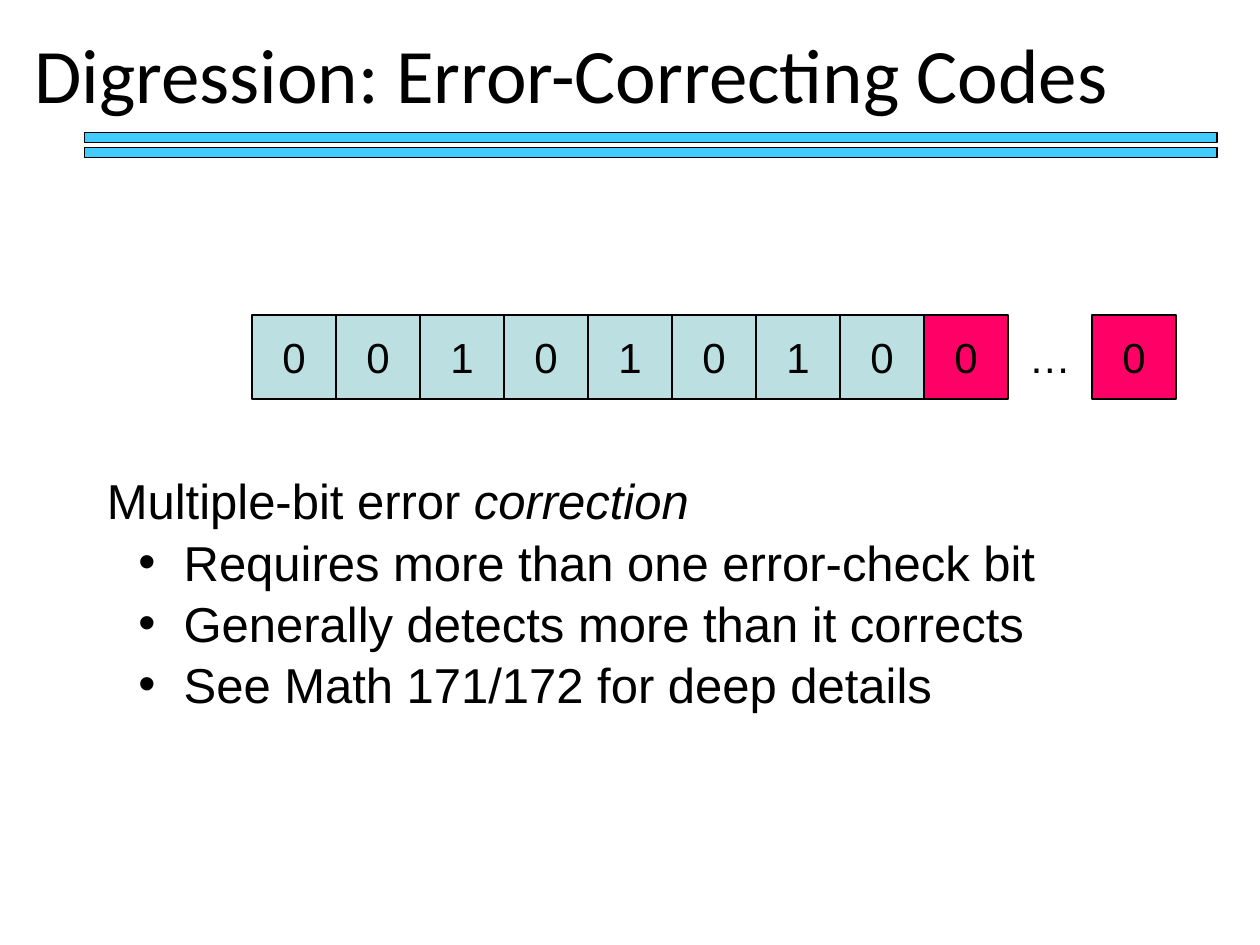
from lxml import etree
from pptx import Presentation
from pptx.dml.color import RGBColor
from pptx.enum.shapes import MSO_SHAPE
from pptx.enum.text import MSO_ANCHOR, PP_ALIGN
from pptx.oxml.ns import qn
from pptx.util import Inches, Pt

COLORS = {
    "text": "000000",
    "outline": "000000",
    "rule": "42CBFD",
    "data": "BCDFE2",
    "check": "FF0066",
}
DATA_BITS = "00101010"
BIT_SIZE = 2 / 3
BITS_LEFT, BITS_TOP = 2, 2.5
POINTS = [
    "Requires more than one error-check bit",
    "Generally detects more than it corrects",
    "See Math 171/172 for deep details",
]


class SlideBuilder:
    def __init__(self, slide):
        self.slide = slide
        self.title_font = "Calibri"
        self.body_font = "Arial"

    def format_runs(self, paragraph, size, font):
        for run in paragraph.runs:
            run.font.size = Pt(size)
            run.font.name = font
            run.font.color.rgb = RGBColor.from_string(COLORS["text"])

    def title(self, text, left, top, width, height):
        heading = self.slide.shapes.title
        heading.left, heading.top = Inches(left), Inches(top)
        heading.width, heading.height = Inches(width), Inches(height)
        frame = heading.text_frame
        frame.text = text
        frame.word_wrap = True
        frame.vertical_anchor = MSO_ANCHOR.MIDDLE
        frame.margin_right = Inches(0.14)
        paragraph = frame.paragraphs[0]
        paragraph.alignment = PP_ALIGN.LEFT
        paragraph.line_spacing = 0.9
        self.format_runs(paragraph, 44, self.title_font)

    def rectangle(self, left, top, width, height, color, line_width, shapes=None):
        shapes = shapes or self.slide.shapes
        box = shapes.add_shape(MSO_SHAPE.RECTANGLE, Inches(left), Inches(top),
                               Inches(width), Inches(height))
        box.shadow.inherit = False
        box.fill.solid()
        box.fill.fore_color.rgb = RGBColor.from_string(COLORS[color])
        box.line.color.rgb = RGBColor.from_string(COLORS["outline"])
        box.line.width = Pt(line_width)
        return box

    def double_rule(self, left, top, width, height, pitch):
        group = self.slide.shapes.add_group_shape()
        for row in range(2):
            self.rectangle(left, top + row * pitch, width, height, "rule", 0.75,
                           group.shapes)

    def bit(self, position, text, color=None):
        """Place one cell of the bit row; without a color it is bare text."""
        left = BITS_LEFT + position * BIT_SIZE
        if color:
            cell = self.rectangle(left, BITS_TOP, BIT_SIZE, BIT_SIZE, color, 1)
        else:
            cell = self.slide.shapes.add_textbox(
                Inches(left), Inches(BITS_TOP), Inches(BIT_SIZE), Inches(BIT_SIZE))
        frame = cell.text_frame
        frame.text = text
        frame.word_wrap = False
        frame.vertical_anchor = MSO_ANCHOR.MIDDLE
        frame.paragraphs[0].alignment = PP_ALIGN.CENTER
        self.format_runs(frame.paragraphs[0], 24, self.body_font)

    def bullet(self, paragraph, margin, hanging):
        properties = paragraph._p.get_or_add_pPr()
        properties.set("marL", str(Inches(margin)))
        properties.set("indent", str(-Inches(hanging)))
        etree.SubElement(properties, qn("a:buFont"), typeface=self.body_font)
        etree.SubElement(properties, qn("a:buChar"), char="•")

    def explanation(self, lead, emphasis, points, left, top, width, height):
        body = self.slide.shapes.add_textbox(
            Inches(left), Inches(top), Inches(width), Inches(height))
        frame = body.text_frame
        frame.word_wrap = True
        frame.text = lead
        emphasized = frame.paragraphs[0].add_run()
        emphasized.text = emphasis
        emphasized.font.italic = True
        for point in points:
            paragraph = frame.add_paragraph()
            paragraph.text = point
            paragraph.level = 1
        for paragraph in frame.paragraphs:
            paragraph.line_spacing = 1.04
            self.format_runs(paragraph, 28, self.body_font)
            if paragraph.level:
                self.bullet(paragraph, 0.61, 0.36)


def main():
    presentation = Presentation()
    presentation.slide_width = Inches(10)
    presentation.slide_height = Inches(7.5)
    title_only = presentation.slide_layouts[5]
    builder = SlideBuilder(presentation.slides.add_slide(title_only))

    builder.title("Digression: Error-Correcting Codes", 0.17, 0, 10, 1.25)
    builder.double_rule(0.67, 1.05, 8.99, 0.08, 0.12)

    for position, value in enumerate(DATA_BITS):
        builder.bit(position, value, "data")
    first_check = len(DATA_BITS)
    builder.bit(first_check, "0", "check")
    builder.bit(first_check + 1, "…")
    builder.bit(first_check + 2, "0", "check")

    builder.explanation("Multiple-bit error ", "correction", POINTS,
                        0.75, 3.67, 8.5, 3.33)
    presentation.save("out.pptx")


if __name__ == "__main__":
    main()
